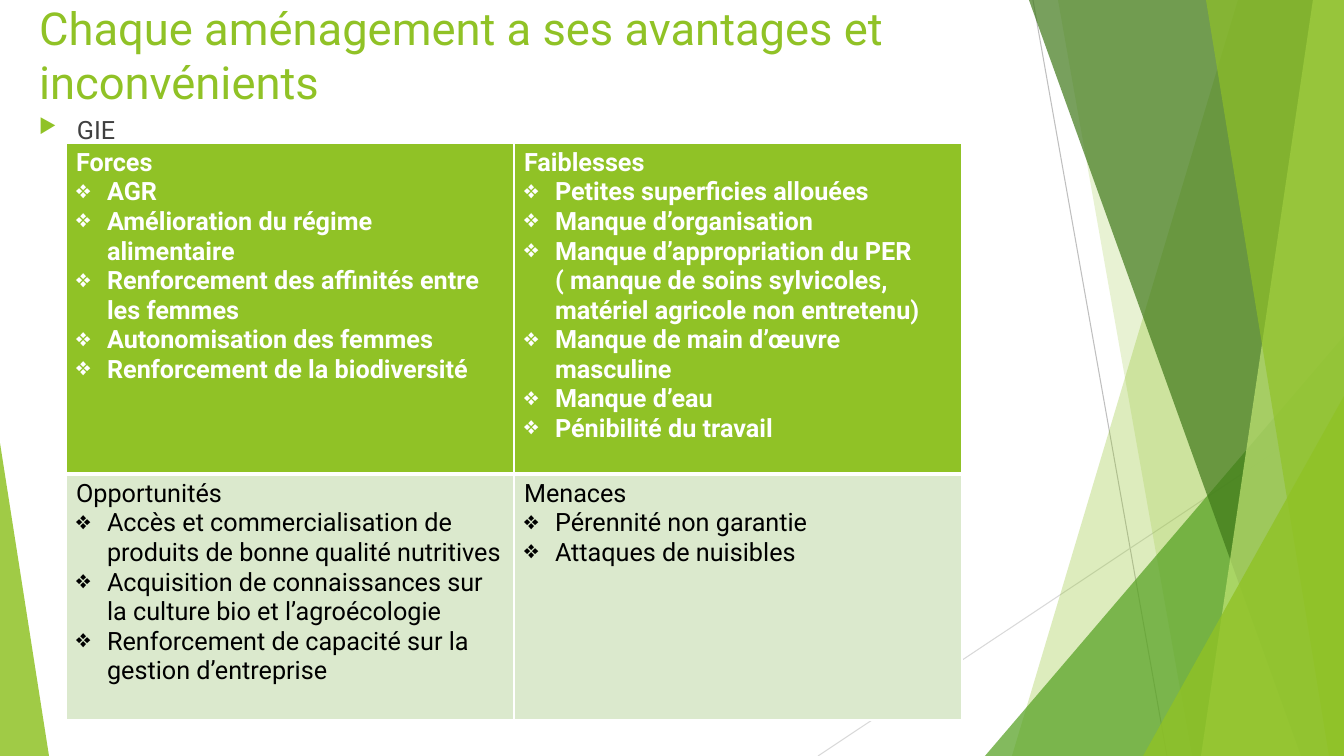
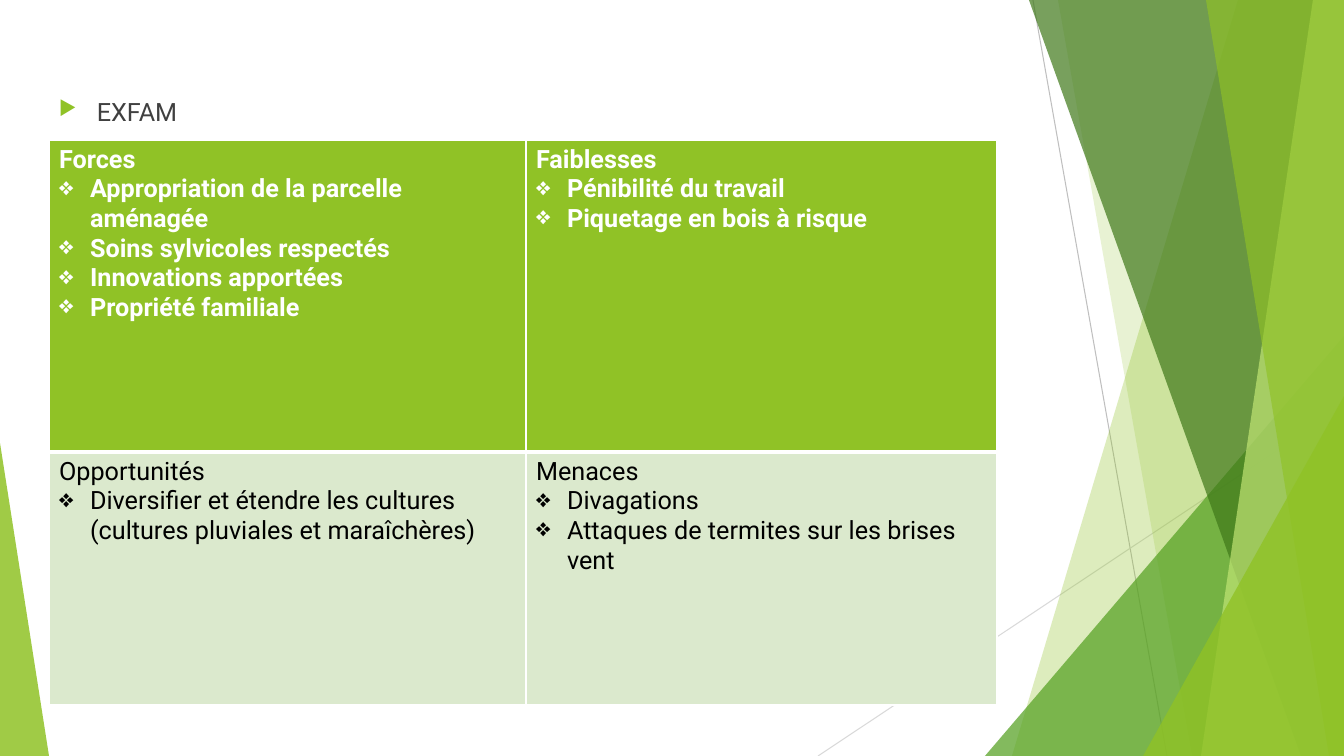
from typing import NamedTuple

from lxml.etree import SubElement
from pptx import Presentation
from pptx.dml.color import RGBColor
from pptx.enum.shapes import MSO_CONNECTOR as Connector, MSO_SHAPE as Shape
from pptx.enum.text import MSO_ANCHOR as Anchor, MSO_AUTO_SIZE as AutoSize, PP_ALIGN as Align
from pptx.oxml.ns import qn
from pptx.util import Pt

SCALE = 12192000 / 1344
FONT = "Roboto"
COLORS = {
    "lime": "90C226",
    "leaf": "54A021",
    "forest": "3F7819",
    "pale": "C0E474",
    "mint": "DBE9CD",
    "white": "FFFFFF",
    "black": "000000",
    "text": "404040",
    "grey": "BFBFBF",
    "light_grey": "D9D9D9",
}


class Box(NamedTuple):
    left: int
    top: int
    width: int
    height: int


def px(length):
    return round(length * SCALE)


def emu(box):
    return [px(length) for length in box]


def rgb(color):
    return RGBColor.from_string(COLORS[color])


def style_text(paragraph, size, color, bold=False):
    for run in paragraph.runs:
        run.font.name = FONT
        run.font.size = Pt(size)
        run.font.bold = bold
        run.font.color.rgb = rgb(color)


def add_bullet(paragraph, mark, indent, color=None, percent=100):
    props = paragraph._p.get_or_add_pPr()
    props.set("marL", str(px(indent)))
    props.set("indent", str(-px(indent)))
    if color:
        SubElement(SubElement(props, qn("a:buClr")), qn("a:srgbClr"), val=COLORS[color])
    SubElement(props, qn("a:buSzPct"), val=str(percent * 1000))
    SubElement(props, qn("a:buChar"), char=mark)


def paint(shape, color, opacity):
    shape.shadow.inherit = False
    shape.fill.solid()
    shape.fill.fore_color.rgb = rgb(color)
    shape.line.fill.background()
    swatch = shape._element.spPr.find(qn("a:solidFill"))[0]
    SubElement(swatch, qn("a:alpha"), val=str(opacity * 1000))


def add_ray(slide, box, start, end, color):
    points = [px(origin + offset) for point in (start, end)
              for origin, offset in zip(box[:2], point)]
    ray = slide.shapes.add_connector(Connector.STRAIGHT, *points)
    ray.line.color.rgb = rgb(color)
    ray.line.width = Pt(0.75)
    SubElement(ray._element.spPr, qn("a:effectLst"))


def add_facet(slide, box, top_x, bottom_x, color, opacity):
    right, bottom = box.left + box.width, box.top + box.height
    outline = slide.shapes.build_freeform(box.left + top_x, box.top, scale=SCALE)
    outline.add_line_segments(
        [(right, box.top), (right, bottom), (box.left + bottom_x, bottom)])
    paint(outline.convert_to_shape(), color, opacity)


def add_corner(slide, box, left, width, height, apex, color, opacity):
    corner = slide.shapes.add_shape(Shape.ISOSCELES_TRIANGLE, *emu(
        (box.left + left, box.top + box.height - height, width, height)))
    corner.adjustments[0] = apex
    paint(corner, color, opacity)


def add_backdrop(slide, box):
    add_ray(slide, box, (1033, 0), (1167, box.height), "grey")
    add_ray(slide, box, (box.width, 406), (818, box.height), "light_grey")
    add_facet(slide, box, 1238, 1012, "lime", 30)
    add_facet(slide, box, 1058, 1192, "lime", 20)
    add_corner(slide, box, 985, 359, 420, 1, "leaf", 72)
    add_facet(slide, box, 1029, 1301, "forest", 70)
    add_facet(slide, box, 1313, 1201, "pale", 70)
    add_facet(slide, box, 1206, 1329, "lime", 65)
    add_corner(slide, box, 1143, 201, 360, 1, "lime", 80)
    add_corner(slide, box, 0, 49, 313, 0, "lime", 85)


def set_title(slide, box, text):
    title = slide.shapes.title
    title.left, title.top, title.width, title.height = emu(box)
    frame = title.text_frame
    frame.text = text
    frame.word_wrap = True
    frame.auto_size = AutoSize.NONE
    frame.vertical_anchor = Anchor.MIDDLE
    heading = frame.paragraphs[0]
    heading.alignment = Align.LEFT
    style_text(heading, 32.4, "lime")


def add_topic(slide, box, text):
    frame = slide.shapes.add_textbox(*emu(box)).text_frame
    frame.word_wrap = True
    frame.text = text
    topic = frame.paragraphs[0]
    topic.space_before = Pt(10)
    add_bullet(topic, "▶", 38, "lime", 80)
    style_text(topic, 18, "text")


def set_borders(cell, widths):
    props = cell._tc.get_or_add_tcPr()
    for position, (side, width) in enumerate(widths.items()):
        border = SubElement(props, qn(f"a:ln{side}"), w=str(Pt(width)))
        SubElement(SubElement(border, qn("a:solidFill")), qn("a:srgbClr"), val=COLORS["white"])
        props.insert(position, border)


def fill_quadrant(cell, heading, points, is_top):
    cell.fill.solid()
    cell.fill.fore_color.rgb = rgb("lime" if is_top else "mint")
    set_borders(cell, {"L": 1, "R": 1, "T": 1 if is_top else 3, "B": 3 if is_top else 1})
    frame = cell.text_frame
    frame.text = "\n".join([heading, *points])
    for paragraph in frame.paragraphs:
        style_text(paragraph, 18, "white" if is_top else "black", is_top)
    for paragraph in frame.paragraphs[1:]:
        add_bullet(paragraph, "❖", 31)


def add_swot(slide, box, first_column, first_row, quadrants):
    swot = slide.shapes.add_table(2, 2, *emu(box)).table
    for column, width in zip(swot.columns, (first_column, box.width - first_column)):
        column.width = px(width)
    for row, height in zip(swot.rows, (first_row, box.height - first_row)):
        row.height = px(height)
    for index, (heading, points) in enumerate(quadrants.items()):
        row, column = divmod(index, 2)
        fill_quadrant(swot.cell(row, column), heading, points, row == 0)


GIE = {
    "Forces": [
        "AGR",
        "Amélioration du régime alimentaire",
        "Renforcement des affinités entre les femmes",
        "Autonomisation des femmes",
        "Renforcement de la biodiversité",
    ],
    "Faiblesses": [
        "Petites superficies allouées",
        "Manque d’organisation",
        "Manque d’appropriation du PER ( manque de soins sylvicoles, "
        "matériel agricole non entretenu)",
        "Manque de main d’œuvre masculine",
        "Manque d’eau",
        "Pénibilité du travail",
    ],
    "Opportunités": [
        "Accès et commercialisation de produits de bonne qualité nutritives",
        "Acquisition de connaissances sur la culture bio et l’agroécologie",
        "Renforcement de capacité sur la gestion d’entreprise",
    ],
    "Menaces": ["Pérennité non garantie", "Attaques de nuisibles"],
}
EXFAM = {
    "Forces": [
        "Appropriation de la parcelle aménagée",
        "Soins sylvicoles respectés",
        "Innovations apportées",
        "Propriété familiale",
    ],
    "Faiblesses": ["Pénibilité du travail", "Piquetage en bois à risque"],
    "Opportunités": [
        "Diversifier et étendre les cultures (cultures pluviales et maraîchères)",
    ],
    "Menaces": ["Divagations", "Attaques de termites sur les brises vent"],
}


def main():
    deck = Presentation()
    page = Box(0, 0, 1344, 756)
    deck.slide_width, deck.slide_height = px(page.width), px(page.height)
    title_only, blank = deck.slide_layouts[5], deck.slide_layouts[6]

    gie = deck.slides.add_slide(title_only)
    add_backdrop(gie, page)
    set_title(gie, Box(29, 0, 948, 109), "Chaque aménagement a ses avantages et inconvénients")
    add_topic(gie, Box(29, 109, 948, 36), "GIE")
    add_swot(gie, Box(66, 143, 896, 577), 448, 331, GIE)

    exfam = deck.slides.add_slide(blank)
    add_backdrop(exfam, page)
    add_topic(exfam, Box(49, 91, 948, 36), "EXFAM")
    add_swot(exfam, Box(49, 140, 948, 565), 477, 312, EXFAM)

    deck.save("out.pptx")


if __name__ == "__main__":
    main()
